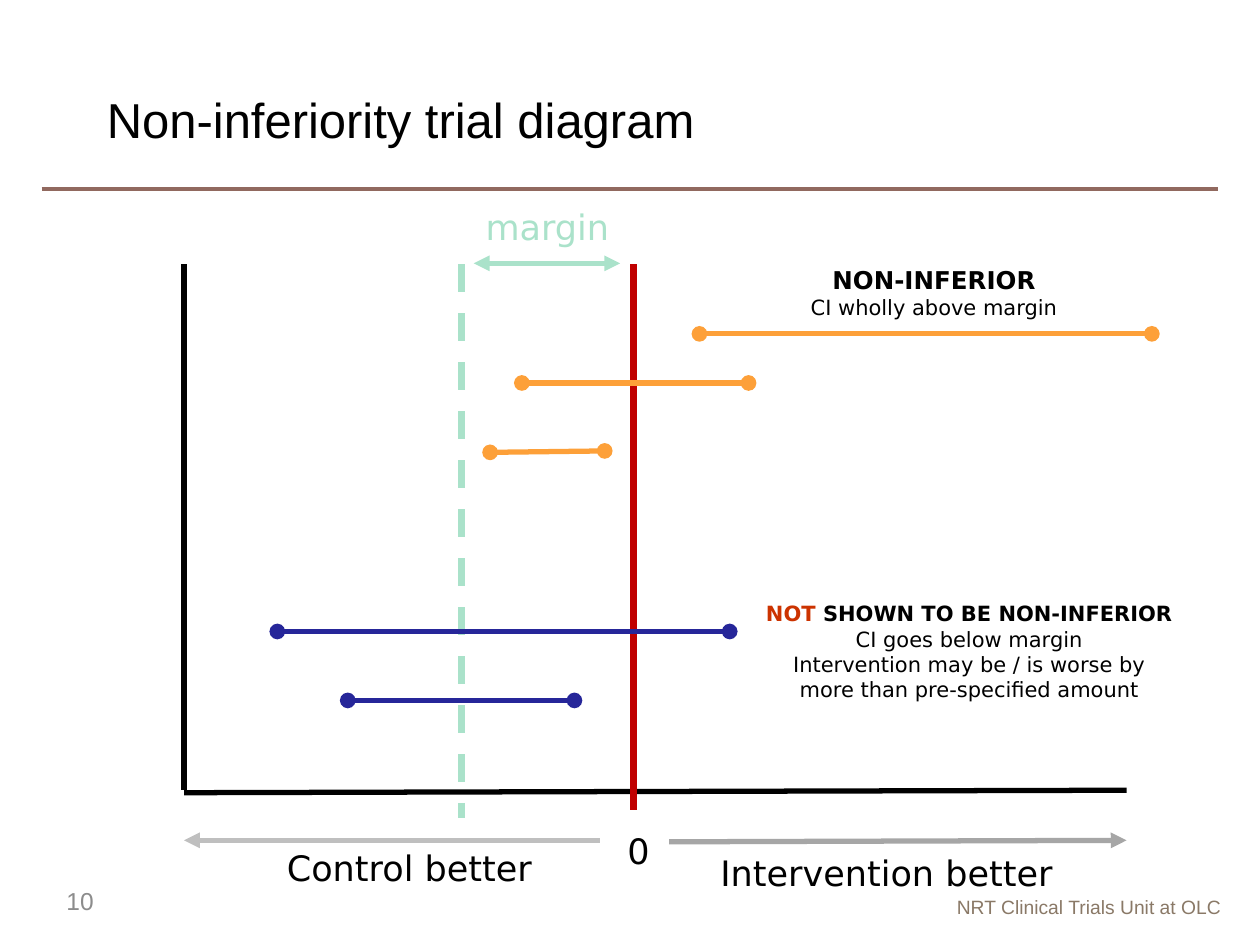
from lxml.etree import SubElement
from pptx import Presentation
from pptx.dml.color import RGBColor
from pptx.enum.dml import MSO_LINE_DASH_STYLE as Dash
from pptx.enum.shapes import MSO_CONNECTOR_TYPE as Link
from pptx.enum.text import MSO_ANCHOR as Anchor, MSO_AUTO_SIZE as Fit, PP_ALIGN as Align
from pptx.oxml.ns import qn
from pptx.util import Cm, Pt

HUES = {
    "black": "000000", "rule": "91695F", "foot": "8A7967", "page": "8C8C8C",
    "mint": "AAE2CA", "red": "C00000", "pale": "BFBFBF", "grey": "A6A6A6",
    "gold": "FDA039", "blue": "262699", "alert": "CC3300",
}

deck = Presentation()
deck.slide_width, deck.slide_height = Cm(25.4), Cm(19.05)
slide = deck.slides.add_slide(deck.slide_layouts[5])


def write(paras, box, shape=None, size=20, hue="black", font="DejaVu Sans",
          align=Align.CENTER, anchor=Anchor.TOP):
    """Fill a shape, or a new text box, with paragraphs of (text, format) runs."""
    spot = [Cm(n) for n in box]
    shape = shape or slide.shapes.add_textbox(*spot)
    shape.left, shape.top, shape.width, shape.height = spot
    frame = shape.text_frame
    frame.word_wrap, frame.auto_size = True, Fit.NONE
    frame.vertical_anchor = anchor
    for i, runs in enumerate(paras):
        para = frame.add_paragraph() if i else frame.paragraphs[0]
        para.alignment = align
        for text, look in runs:
            run = para.add_run()
            run.text = text
            run.font.name = font
            run.font.size = Pt(look.get("size", size))
            run.font.bold = look.get("bold", False)
            run.font.color.rgb = RGBColor.from_string(HUES[look.get("hue", hue)])


def draw(x1, y1, x2, y2, hue, width=3, head=None, tail=None, dash=None):
    line = slide.shapes.add_connector(Link.STRAIGHT, Cm(x1), Cm(y1), Cm(x2), Cm(y2))
    line.line.color.rgb = RGBColor.from_string(HUES[hue])
    line.line.width = Pt(width)
    if dash:
        line.line.dash_style = dash
    props = line._element.spPr
    for tag, kind in (("a:headEnd", head), ("a:tailEnd", tail)):
        if kind:
            SubElement(props.find(qn("a:ln")), qn(tag), type=kind)
    SubElement(props, qn("a:effectLst"))


# Title, rule and footer
draw(0.84, 3.81, 24.56, 3.81, "rule", width=1.75)
write([[("NRT Clinical Trials Unit at OLC", {})]], (16.41, 17.93, 8.46, 0.74),
      size=11, hue="foot", font="Arial", align=Align.RIGHT)
write([[("Non-inferiority trial diagram", {})]], (1.9, 1.27, 21.74, 2.26),
      shape=slide.shapes.title, size=28, font="Arial", align=Align.LEFT,
      anchor=Anchor.MIDDLE)
write([[("10", {})]], (1.09, 17.65, 5.72, 1.02), size=14, hue="page",
      font="Arial", align=Align.LEFT, anchor=Anchor.MIDDLE)

# Axes, margin and zero line
left, right, top, base = 3.71, 22.71, 5.33, 15.93
draw(left, top, left, base, "black")
draw(left, base + 0.05, right, base, "black")
draw(9.3, top, 9.3, 16.48, "mint", width=4, dash=Dash.DASH)
draw(12.78, top, 12.78, 16.33, "red", width=4)

# Direction arrows and labels
draw(12.09, 16.94, left, 16.94, "pale", tail="triangle")
draw(13.49, 16.97, right, 16.94, "grey", tail="triangle")
draw(9.55, 5.31, 12.5, 5.31, "mint", head="triangle", tail="triangle")
for text, box, hue in (
    ("0", (12.4, 16.59, 0.79, 1.12), "black"),
    ("Control better", (5.46, 16.94, 5.59, 1.12), "black"),
    ("Intervention better", (13.28, 17.04, 9.19, 1.12), "black"),
    ("margin", (8.33, 4.01, 5.41, 1.12), "mint"),
):
    write([[(text, {})]], box, hue=hue)

# Confidence intervals
for x1, y1, x2, y2, hue in (
    (14.1, 6.73, 23.22, 6.73, "gold"),
    (10.52, 7.72, 15.09, 7.72, "gold"),
    (5.59, 12.73, 14.71, 12.73, "blue"),
    (7.01, 14.12, 11.58, 14.12, "blue"),
    (9.88, 9.12, 12.19, 9.09, "gold"),
):
    draw(x1, y1, x2, y2, hue, head="oval", tail="oval")

# Verdicts
write([
    [("NON-INFERIOR", {"size": 14, "bold": True})],
    [("CI wholly above margin", {})],
], (14.45, 5.21, 8.76, 1.37), size=12)
write([
    [("NOT ", {"bold": True, "hue": "alert"}),
     ("SHOWN TO BE NON-INFERIOR", {"bold": True})],
    [("CI goes below margin", {})],
    [("Intervention may be / is worse by more than pre-specified amount", {})],
], (15.16, 11.99, 8.76, 2.82), size=12)

deck.save("out.pptx")
